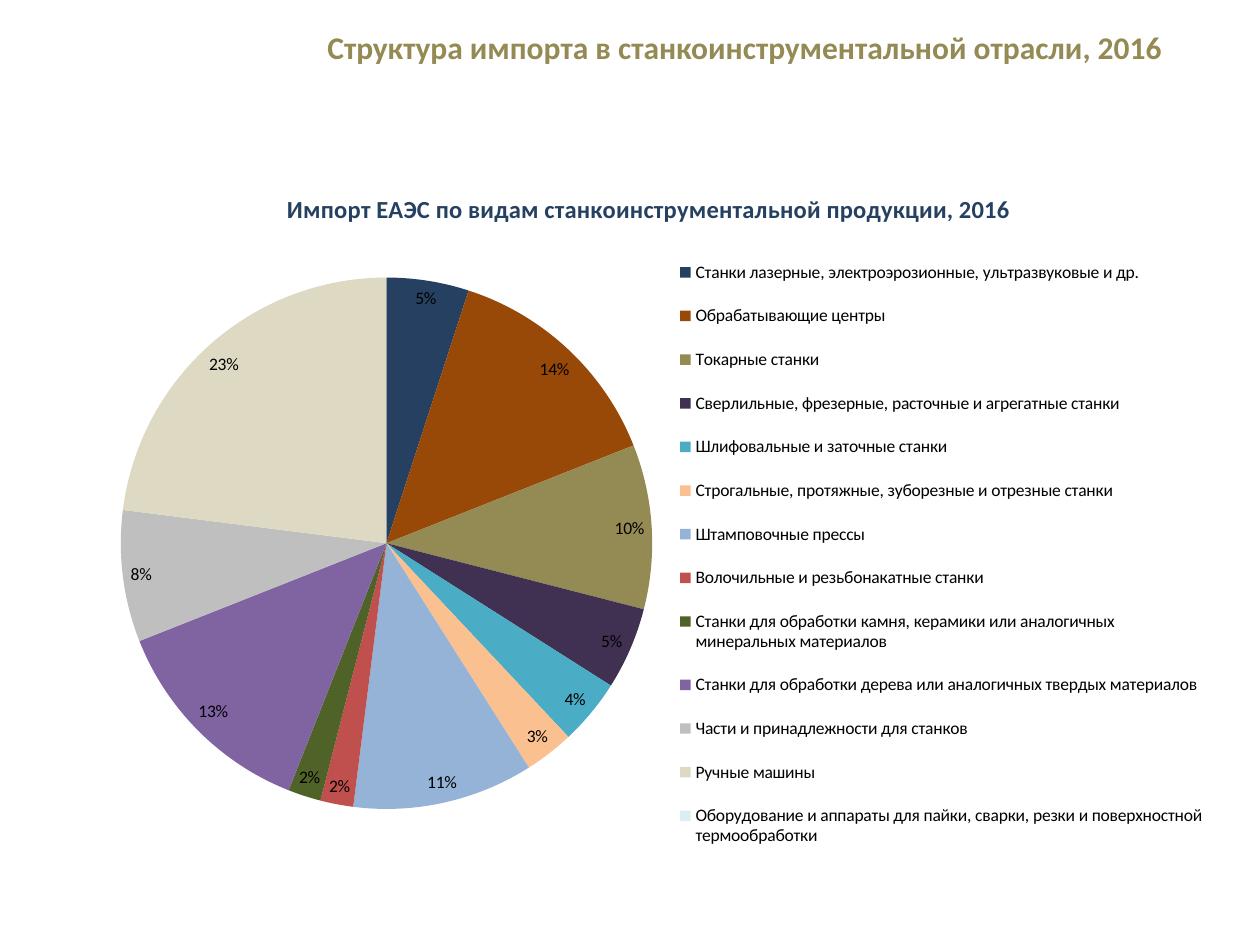
from lxml.etree import SubElement
from pptx import Presentation
from pptx.chart.data import CategoryChartData
from pptx.dml.color import RGBColor
from pptx.enum.chart import XL_CHART_TYPE, XL_LABEL_POSITION, XL_LEGEND_POSITION
from pptx.enum.text import MSO_ANCHOR
from pptx.oxml.ns import qn
from pptx.util import Inches, Pt

TITLE = "Структура импорта в станкоинструментальной отрасли, 2016"
CHART_TITLE = "Импорт ЕАЭС по видам станкоинструментальной продукции, 2016"
FONT = "Calibri"
OLIVE = RGBColor(0x94, 0x8A, 0x54)
NAVY = RGBColor(0x25, 0x40, 0x61)
BLACK = RGBColor(0, 0, 0)

IMPORTS = [
    ("Станки лазерные, электроэрозионные, ультразвуковые и др.", 5, NAVY),
    ("Обрабатывающие центры", 14, RGBColor(0x98, 0x48, 0x07)),
    ("Токарные станки", 10, OLIVE),
    ("Сверлильные, фрезерные, расточные и агрегатные станки", 5, RGBColor(0x40, 0x31, 0x52)),
    ("Шлифовальные и заточные станки", 4, RGBColor(0x4B, 0xAC, 0xC6)),
    ("Строгальные, протяжные, зуборезные и отрезные станки", 3, RGBColor(0xFA, 0xC0, 0x90)),
    ("Штамповочные прессы", 11, RGBColor(0x95, 0xB3, 0xD7)),
    ("Волочильные и резьбонакатные станки", 2, RGBColor(0xC0, 0x50, 0x4D)),
    ("Станки для обработки камня, керамики или аналогичных минеральных материалов", 2,
     RGBColor(0x4F, 0x62, 0x28)),
    ("Станки для обработки дерева или аналогичных твердых материалов", 13,
     RGBColor(0x80, 0x64, 0xA2)),
    ("Части и принадлежности для станков", 8, RGBColor(0xBF, 0xBF, 0xBF)),
    ("Ручные машины", 23, RGBColor(0xDD, 0xD9, 0xC3)),
    ("Оборудование и аппараты для пайки, сварки, резки и поверхностной термообработки", 0,
     RGBColor(0xDB, 0xEE, 0xF4)),
]


def set_font(font, size, color, bold=False):
    font.name = FONT
    font.size = Pt(size)
    font.bold = bold
    font.color.rgb = color


def set_layout(element, **settings):
    for old in element.findall(qn("c:layout")):
        element.remove(old)
    layout = SubElement(element, qn("c:layout"))
    manual = SubElement(layout, qn("c:manualLayout"))
    for name, value in settings.items():
        SubElement(manual, qn(f"c:{name}")).set("val", str(value))
    overlay = element.find(qn("c:overlay"))
    if overlay is None:
        element.insert(0, layout)
    else:
        overlay.addprevious(layout)


prs = Presentation()
prs.slide_width, prs.slide_height = Inches(10), Inches(7.5)
s = prs.slides.add_slide(prs.slide_layouts[6])

tf = s.shapes.add_textbox(Inches(2.5), Inches(0.24), Inches(7.17), Inches(0.26)).text_frame
tf.word_wrap = True
tf.vertical_anchor = MSO_ANCHOR.MIDDLE
tf.margin_top = tf.margin_bottom = 0
p = tf.paragraphs[0]
p.text = TITLE
set_font(p.font, 18, OLIVE, True)

names, shares, colors = zip(*IMPORTS)
data = CategoryChartData()
data.categories = names
data.add_series("Импорт", shares)
chart = s.shapes.add_chart(XL_CHART_TYPE.PIE, Inches(0.5), Inches(1.26),
                           Inches(9.17), Inches(5.76), data).chart
set_font(chart.font, 10, BLACK)

chart.has_title = True
p = chart.chart_title.text_frame.paragraphs[0]
p.text = CHART_TITLE
set_font(p.font, 14, NAVY, True)

chart.has_legend = True
legend = chart.legend
legend.position = XL_LEGEND_POSITION.RIGHT
legend.include_in_layout = False
set_font(legend.font, 10, BLACK)

plot = chart.plots[0]
plot.vary_by_categories = True
for i, color in enumerate(colors):
    fill = plot.series[0].points[i].format.fill
    fill.solid()
    fill.fore_color.rgb = color

plot.has_data_labels = True
labels = plot.data_labels
labels.show_percentage = True
labels.show_value = False
labels.number_format = "0%"
labels.number_format_is_linked = False
labels.position = XL_LABEL_POSITION.BEST_FIT
set_font(labels.font, 10, BLACK)

edge = {"xMode": "edge", "yMode": "edge"}
set_layout(chart.chart_title._element, **edge, x=0.19, y=0.04)
set_layout(legend._element, **edge, x=0.53, y=0.11, w=0.46, h=0.87)
set_layout(plot._element.getparent(), layoutTarget="inner", **edge,
           x=0.05, y=0.15, w=0.46, h=0.76)

prs.save("out.pptx")
